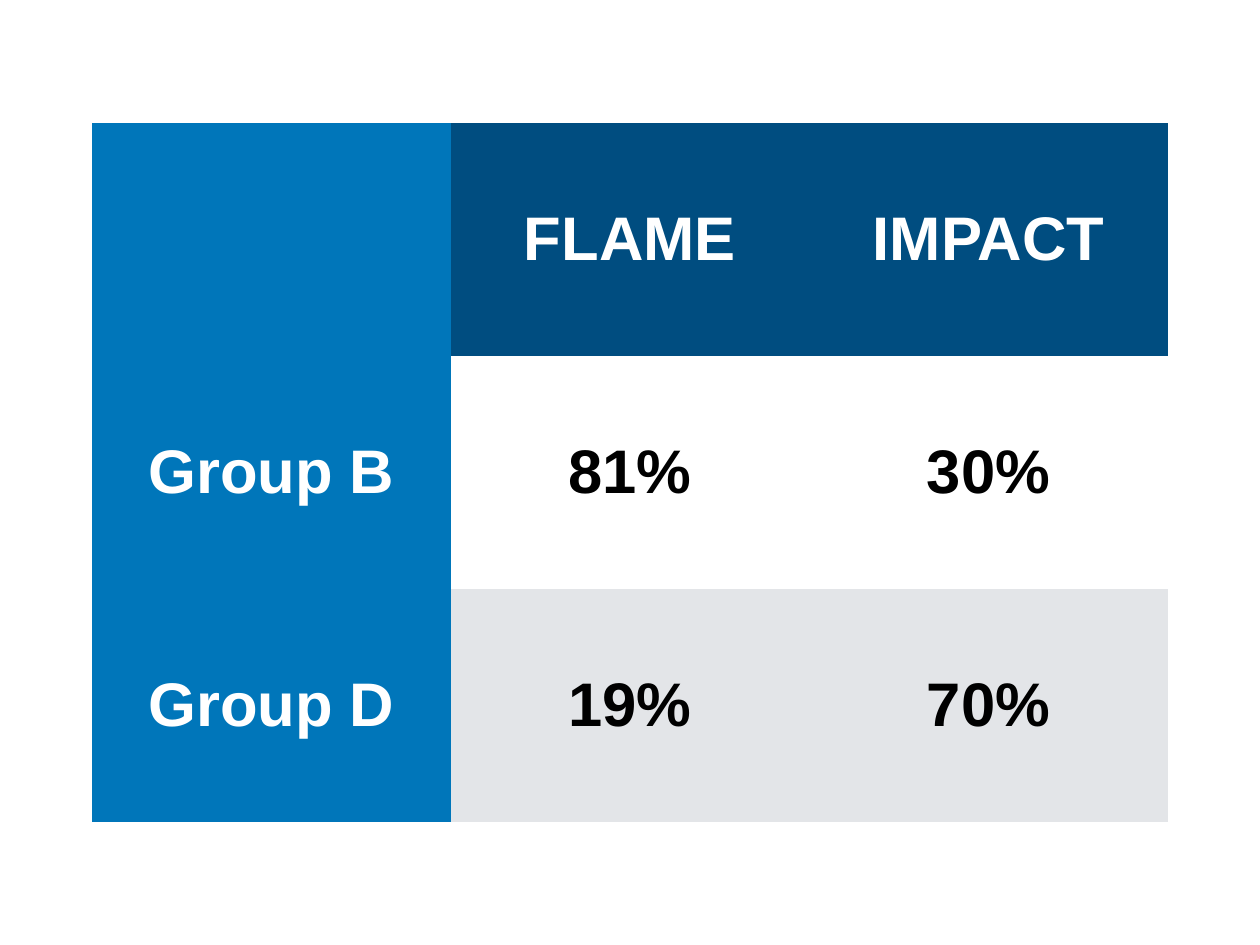
from pptx import Presentation
from pptx.dml.color import RGBColor
from pptx.enum.text import MSO_ANCHOR, PP_ALIGN
from pptx.oxml.ns import qn
from pptx.util import Inches, Pt

COLORS = {
    "header": "004D80",
    "group": "0076BA",
    "plain": "FFFFFF",
    "band": "E3E5E8",
    "light": "FFFFFF",
    "dark": "000000",
}
NO_STYLE_NO_GRID = "{2D5ABB26-0587-4C30-8999-92F81FD0307C}"
RESULTS = [
    ["", "FLAME", "IMPACT"],
    ["Group B", "81%", "30%"],
    ["Group D", "19%", "70%"],
]


class SlideBuilder:
    """Holds the text style and the current slide."""

    def __init__(self, page, font="Arial", size=50, inset=0.06):
        self.page = page
        self.font = font
        self.size = size
        self.inset = Inches(inset)

    def add_table(self, rows, left, top, width, height):
        frame = self.page.shapes.add_table(
            len(rows), len(rows[0]),
            Inches(left), Inches(top), Inches(width), Inches(height))
        table = frame.table
        table.first_row = table.horz_banding = False
        for style in frame.element.iter(qn("a:tableStyleId")):
            style.text = NO_STYLE_NO_GRID
        for row, texts in enumerate(rows):
            for column, text in enumerate(texts):
                if column == 0:
                    fill = "group"
                elif row == 0:
                    fill = "header"
                else:
                    fill = "plain" if row % 2 else "band"
                color = "dark" if row and column else "light"
                self.fill_cell(table.cell(row, column), text, fill, color)

    def fill_cell(self, cell, text, fill, color):
        cell.fill.solid()
        cell.fill.fore_color.rgb = RGBColor.from_string(COLORS[fill])
        cell.vertical_anchor = MSO_ANCHOR.MIDDLE
        cell.margin_left = cell.margin_right = self.inset
        cell.margin_top = cell.margin_bottom = self.inset
        if text:
            para = cell.text_frame.paragraphs[0]
            para.alignment = PP_ALIGN.CENTER
            span = para.add_run()
            span.text = text
            span.font.name = self.font
            span.font.size = Pt(self.size)
            span.font.bold = True
            span.font.color.rgb = RGBColor.from_string(COLORS[color])


def main():
    deck = Presentation()
    deck.slide_width = Inches(14.22)
    deck.slide_height = Inches(10.67)
    builder = SlideBuilder(deck.slides.add_slide(deck.slide_layouts[6]))
    builder.add_table(RESULTS, 1.04, 1.39, 12.14, 7.89)
    deck.save("out.pptx")


if __name__ == "__main__":
    main()
